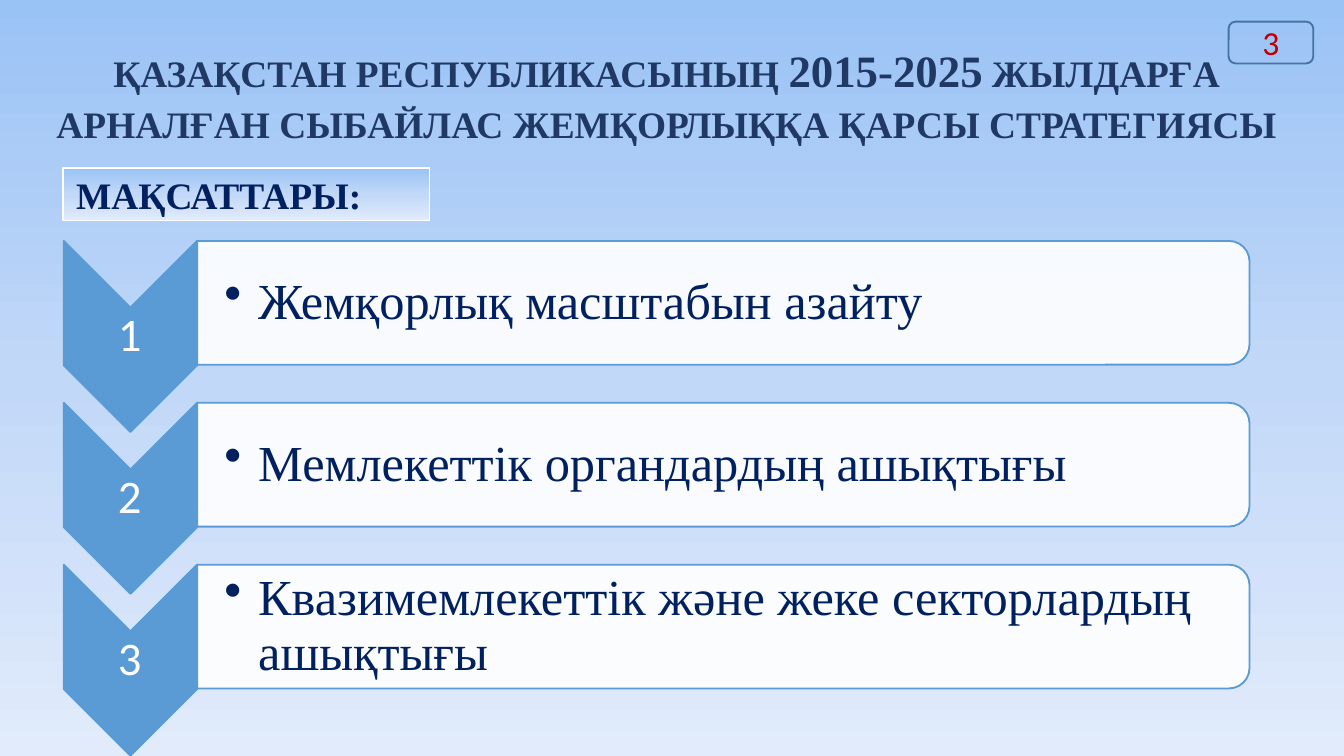
"""Build a slide listing the three goals of an anti-corruption strategy."""
from copy import deepcopy
from dataclasses import dataclass

from lxml import etree
from pptx import Presentation
from pptx.dml.color import RGBColor
from pptx.enum.shapes import MSO_SHAPE
from pptx.enum.text import MSO_ANCHOR, MSO_AUTO_SIZE, PP_ALIGN
from pptx.oxml.ns import qn
from pptx.util import Cm, Pt

RECT = MSO_SHAPE.RECTANGLE
ROUND = MSO_SHAPE.ROUNDED_RECTANGLE
CHEVRON = MSO_SHAPE.CHEVRON
PANEL = MSO_SHAPE.ROUND_2_SAME_RECTANGLE
MIDDLE = MSO_ANCHOR.MIDDLE
GROW = MSO_AUTO_SIZE.SHAPE_TO_FIT_TEXT
LEFT, CENTER = PP_ALIGN.LEFT, PP_ALIGN.CENTER


@dataclass(frozen=True)
class Theme:
    serif: str = "Times New Roman"
    sans: str = "Calibri"
    sky: tuple = ("9AC3F5", "C2D8F8", "E1EBFB")
    title: str = "203864"
    navy: str = "002060"
    blue: str = "5B9BD5"
    steel: str = "43739E"
    red: str = "C00000"
    white: str = "FFFFFF"
    head: int = 20
    year: int = 24
    goal: int = 27
    digit: int = 25
    page: int = 18


theme = Theme()


def shade(fill, node):
    fill.gradient()
    fill.gradient_angle = 270
    stops = next(node.iter(qn("a:gsLst")))
    stops.insert(1, deepcopy(stops[0]))
    for stop, place, tint in zip(fill.gradient_stops, (0, 0.5, 1), theme.sky):
        stop.position = place
        stop.color.rgb = RGBColor.from_string(tint)


def write(shape, runs, face, color, align=LEFT, bold=False, space=None):
    frame = shape.text_frame
    frame.word_wrap = True
    frame.vertical_anchor = MIDDLE
    para = frame.paragraphs[0]
    para.alignment = align
    para.line_spacing = space
    for words, size in runs:
        run = para.add_run()
        run.text = words
        run.font.name = face
        run.font.size = Pt(size)
        run.font.bold = bold
        run.font.color.rgb = RGBColor.from_string(color)
    return para


deck = Presentation()
deck.slide_width, deck.slide_height = Cm(25.4), Cm(14.29)
slide = deck.slides.add_slide(deck.slide_layouts[6])
shapes = slide.shapes
shade(slide.background.fill, slide.element)

title = shapes.add_textbox(Cm(0.79), Cm(0.58), Cm(23.62), Cm(2.34))
write(title, [
    ("ҚАЗАҚСТАН РЕСПУБЛИКАСЫНЫҢ ", theme.head),
    ("2015-2025", theme.year),
    (" ЖЫЛДАРҒА АРНАЛҒАН СЫБАЙЛАС ЖЕМҚОРЛЫҚҚА ҚАРСЫ СТРАТЕГИЯСЫ", theme.head),
], theme.serif, theme.title, CENTER, True, 1.1)
title.text_frame.vertical_anchor = MSO_ANCHOR.TOP
title.text_frame.auto_size = GROW

label = shapes.add_shape(RECT, Cm(1.19), Cm(3.18), Cm(6.93), Cm(0.99))
shade(label.fill, label.element)
label.line.color.rgb = RGBColor.from_string(theme.white)
write(label, [("МАҚСАТТАРЫ:", theme.head)], theme.serif, theme.navy, bold=True)

goals = (
    "Жемқорлық масштабын азайту",
    "Мемлекеттік органдардың ашықтығы",
    "Квазимемлекеттік және жеке секторлардың ашықтығы",
)
for step, goal in enumerate(goals):
    drop = 3.06 * step

    arrow = shapes.add_shape(CHEVRON, Cm(0.66), Cm(5.1 + drop), Cm(3.61), Cm(2.52))
    arrow.fill.solid()
    arrow.fill.fore_color.rgb = RGBColor.from_string(theme.blue)

    digit = shapes.add_textbox(Cm(1.19), Cm(5.82 + drop), Cm(2.52), Cm(1.09))
    write(digit, [(str(step + 1), theme.digit)], theme.sans, theme.white, CENTER, space=0.9)

    panel = shapes.add_shape(PANEL, Cm(12.5), Cm(-4.22 + drop), Cm(2.34), Cm(19.89))
    panel.fill.solid()
    panel.fill.fore_color.rgb = RGBColor.from_string(theme.white)
    tint = next(panel.fill._xPr.iter(qn("a:srgbClr")))
    etree.SubElement(tint, qn("a:alpha"), val="90000")

    for shape in (arrow, panel):
        shape.rotation = 90
        shape.line.color.rgb = RGBColor.from_string(theme.blue)

    body = shapes.add_textbox(Cm(3.71), Cm(4.67 + drop), Cm(19.79), Cm(2.11))
    para = write(body, [(goal, theme.goal)], theme.serif, theme.navy, space=0.9)
    para.level = 1
    props = para._p.get_or_add_pPr()
    props.set("marL", str(Cm(0.64)))
    props.set("indent", str(Cm(-0.64)))
    etree.SubElement(props, qn("a:buChar"), char="•")

    for box, inset in ((digit, 0.05), (body, 0.53)):
        frame = box.text_frame
        frame.margin_left = Cm(inset)
        frame.margin_right = frame.margin_top = frame.margin_bottom = Cm(0.05)

badge = shapes.add_shape(ROUND, Cm(23.22), Cm(0.41), Cm(1.6), Cm(0.79))
badge.fill.background()
badge.line.color.rgb = RGBColor.from_string(theme.steel)
write(badge, [("3", theme.page)], theme.sans, theme.red, CENTER)

for shape in shapes:
    if shape not in (title,) and shape.shape_type != title.shape_type:
        shape.shadow.inherit = False
        shape.line.width = Pt(1)

deck.save("out.pptx")
